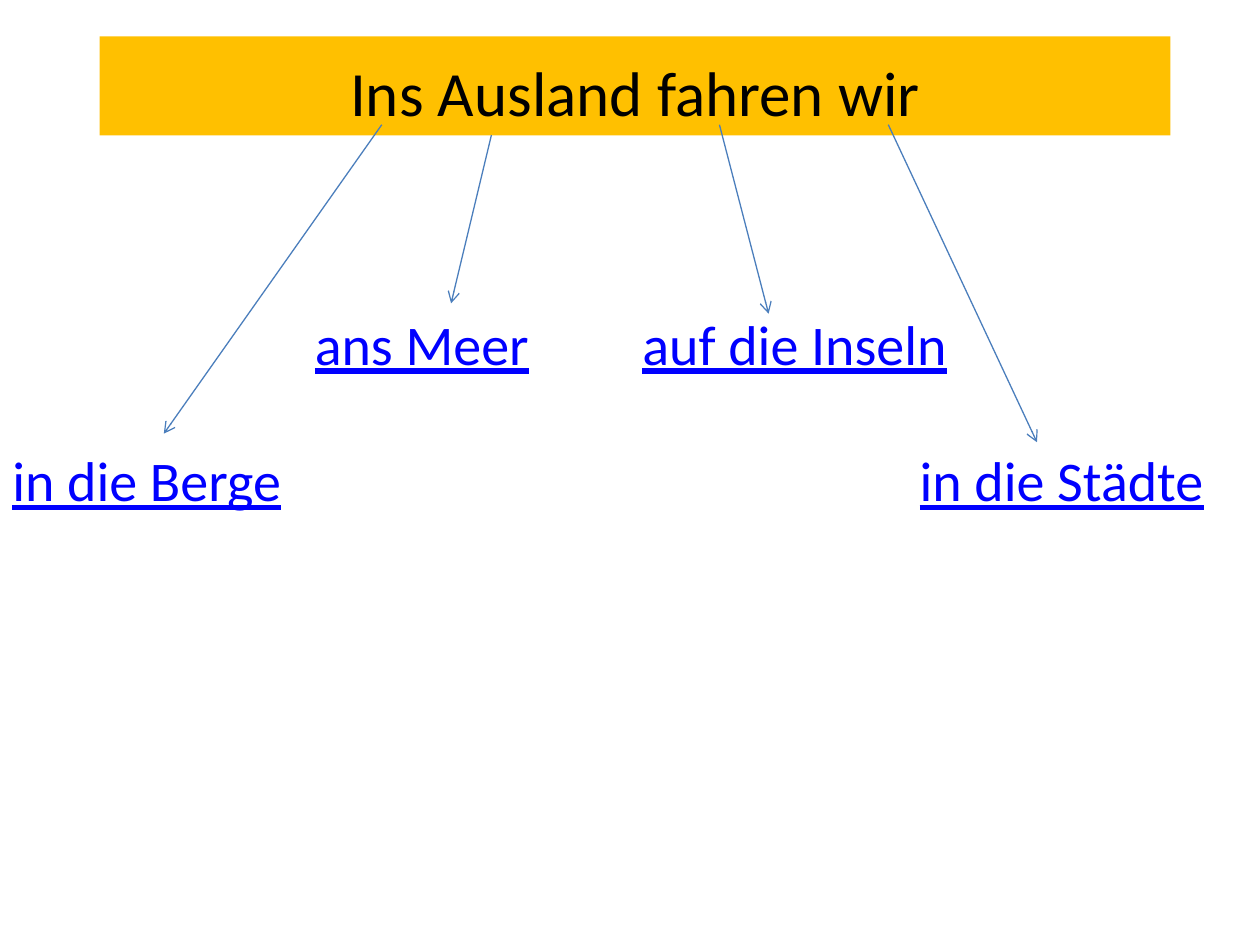
from typing import NamedTuple

from lxml.etree import SubElement
from pptx import Presentation
from pptx.dml.color import RGBColor
from pptx.enum.shapes import MSO_CONNECTOR as Link, MSO_SHAPE as Form
from pptx.enum.text import MSO_ANCHOR as Anchor, PP_ALIGN as Align
from pptx.oxml.ns import qn
from pptx.util import Inches, Pt

WIDE, HIGH = Inches(10), Inches(7.5)
HUES = {"band": "FFC000", "text": "000000", "goal": "0000FF", "line": "4B7EBC"}
HEAD = {"name": "Calibri", "size": Pt(36), "underline": False}
GOAL = {"name": "Calibri", "size": Pt(32), "underline": True}
UPPER, LOWER = 32.1, 46.5


class Spot(NamedTuple):
    """A place in percent of the slide's width and height."""
    x: float
    y: float

    def emu(self) -> tuple[int, int]:
        return round(WIDE * self.x / 100), round(HIGH * self.y / 100)


class Goal(NamedTuple):
    text: str
    place: Spot
    width: float
    start: Spot
    end: Spot


GOALS = [
    Goal("in die Berge", Spot(0, LOWER), 24, Spot(30.3, 13.2), Spot(13, 45.9)),
    Goal("ans Meer", Spot(24, UPPER), 20, Spot(39, 14.3), Spot(35.8, 32.1)),
    Goal("auf die Inseln", Spot(50, UPPER), 27, Spot(57.1, 13.2), Spot(61, 33.2)),
    Goal("in die Städte", Spot(72, LOWER), 25, Spot(70.5, 13.2), Spot(82.3, 46.8)),
]


def hue(name: str) -> RGBColor:
    return RGBColor.from_string(HUES[name])


def write(shape, text: str, style: dict, tone: str, align: Align, anchor: Anchor) -> None:
    frame = shape.text_frame
    frame.word_wrap = True
    frame.vertical_anchor = anchor
    para = frame.paragraphs[0]
    para.alignment = align
    run = para.add_run()
    run.text = text
    for key, value in style.items():
        setattr(run.font, key, value)
    run.font.color.rgb = hue(tone)


def draw_band(slide, text: str) -> None:
    band = slide.shapes.add_shape(Form.RECTANGLE, *Spot(7.9, 3.85).emu(), *Spot(85, 10.5).emu())
    band.shadow.inherit = False
    band.fill.solid()
    band.fill.fore_color.rgb = hue("band")
    band.line.fill.background()
    write(band, text, HEAD, "text", Align.CENTER, Anchor.BOTTOM)


def draw_arrow(slide, start: Spot, end: Spot) -> None:
    arrow = slide.shapes.add_connector(Link.STRAIGHT, *start.emu(), *end.emu())
    arrow.line.color.rgb = hue("line")
    arrow.line.width = Pt(0.75)
    SubElement(arrow.line._get_or_add_ln(), qn("a:tailEnd"), type="arrow")
    SubElement(arrow._element.spPr, qn("a:effectLst"))


def draw_goal(slide, goal: Goal) -> None:
    box = slide.shapes.add_textbox(*goal.place.emu(), *Spot(goal.width, 8.5).emu())
    write(box, goal.text, GOAL, "goal", Align.LEFT, Anchor.TOP)
    draw_arrow(slide, goal.start, goal.end)


def main() -> None:
    deck = Presentation()
    deck.slide_width, deck.slide_height = WIDE, HIGH
    slide = deck.slides.add_slide(deck.slide_layouts[6])
    draw_band(slide, "Ins Ausland fahren wir")
    for goal in GOALS:
        draw_goal(slide, goal)
    deck.save("out.pptx")


if __name__ == "__main__":
    main()
